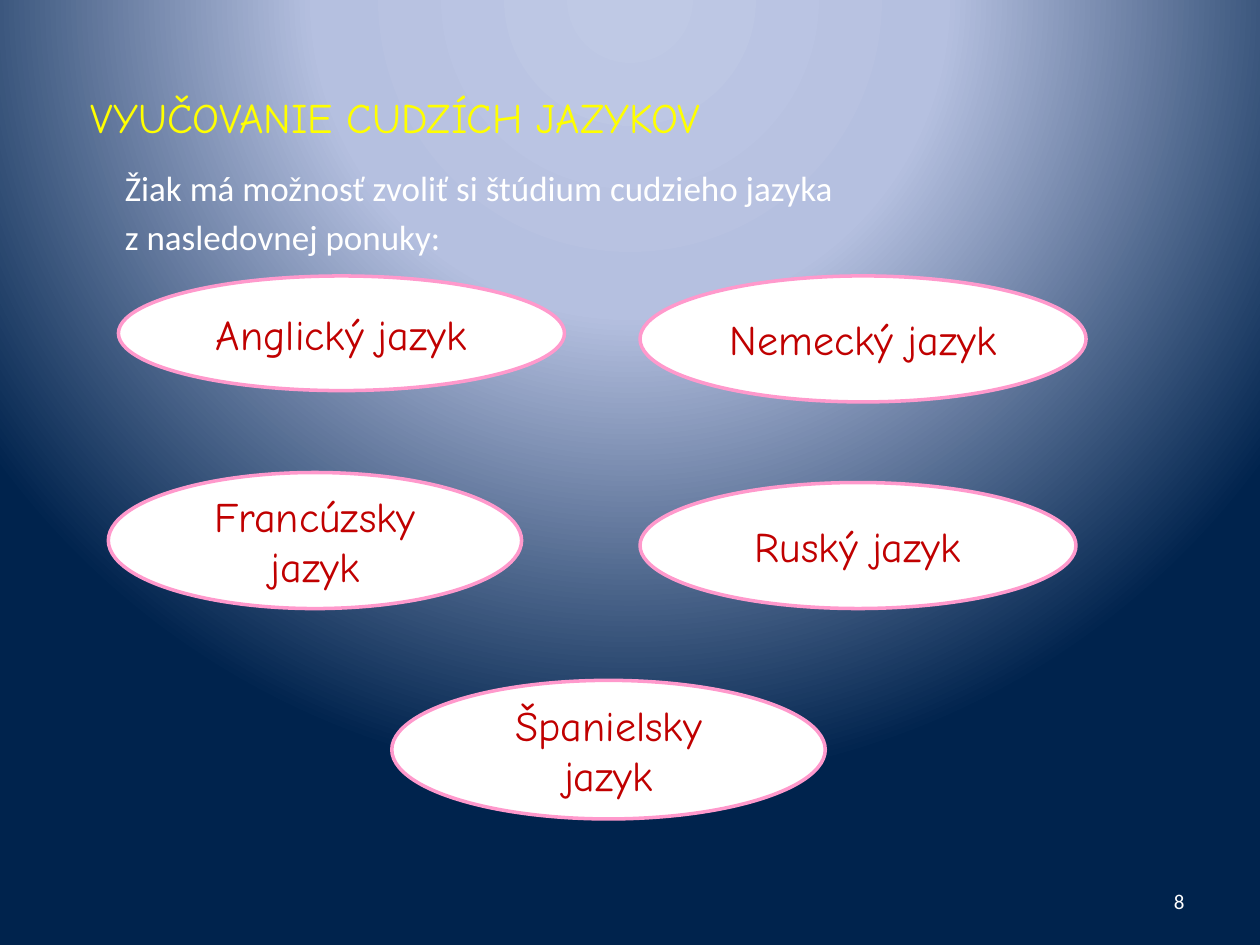
"""Build a slide listing the foreign languages a pupil can choose."""
from lxml import etree
from pptx import Presentation
from pptx import util as u
from pptx.dml.color import RGBColor
from pptx.enum import shapes, text
from pptx.oxml.ns import qn

COLORS = {
    "glow": "BFC9E5",
    "haze": "B5C0E0",
    "navy": "00234D",
    "white": "FFFFFF",
    "yellow": "FFFF00",
    "pink": "FF99CC",
    "red": "C00000",
}


class SlideBuilder:
    def __init__(self, presentation):
        self.slide = presentation.slides.add_slide(presentation.slide_layouts[1])
        self.heading_font = "Comic Neue"
        self.body_font = "Calibri"

    def color(self, name):
        return RGBColor.from_string(COLORS[name])

    def place(self, shape, left, top, width, height):
        shape.left, shape.top = u.Inches(left), u.Inches(top)
        shape.width, shape.height = u.Inches(width), u.Inches(height)

    def set_text(self, shape, lines, font, size, color, align, anchor):
        frame = shape.text_frame
        frame.text = "\n".join(lines)
        frame.word_wrap = True
        frame.auto_size = text.MSO_AUTO_SIZE.NONE
        frame.vertical_anchor = anchor
        for paragraph in frame.paragraphs:
            paragraph.alignment = align
            paragraph.font.name = font
            paragraph.font.size = u.Pt(size)
            paragraph.font.color.rgb = self.color(color)
        return frame

    def background(self, stops):
        self.slide.background.fill.gradient()
        gradient = self.slide.element.find(".//" + qn("a:gradFill"))
        for child in list(gradient):
            gradient.remove(child)
        stop_list = etree.SubElement(gradient, qn("a:gsLst"))
        for position, name in stops:
            stop = etree.SubElement(stop_list, qn("a:gs"), pos=str(position * 1000))
            etree.SubElement(stop, qn("a:srgbClr"), val=COLORS[name])
        circle = etree.SubElement(gradient, qn("a:path"), path="circle")
        etree.SubElement(circle, qn("a:fillToRect"),
                         l="50000", t="-80000", r="50000", b="180000")

    def title(self, wording, *box):
        shape = self.slide.shapes.title
        self.place(shape, *box)
        self.set_text(shape, [wording], self.heading_font, 24, "yellow",
                      text.PP_ALIGN.LEFT, text.MSO_ANCHOR.TOP)

    def body(self, lines, *box):
        shape = self.slide.placeholders[1]
        self.place(shape, *box)
        frame = self.set_text(shape, lines, self.body_font, 20, "white",
                              text.PP_ALIGN.LEFT, text.MSO_ANCHOR.TOP)
        for index, paragraph in enumerate(frame.paragraphs):
            paragraph.space_before = u.Pt(4 if index else 0)
            properties = paragraph._p.get_or_add_pPr()
            properties.set("marL", str(u.Inches(0.19)))
            properties.set("indent", "0")
            bullet = etree.Element(qn("a:buNone"))
            properties.find(qn("a:defRPr")).addprevious(bullet)

    def page_number(self, number, *box):
        shape = self.slide.shapes.add_textbox(*map(u.Inches, box))
        self.set_text(shape, [str(number)], self.body_font, 12, "white",
                      text.PP_ALIGN.RIGHT, text.MSO_ANCHOR.MIDDLE)

    def language(self, wording, *box):
        shape = self.slide.shapes.add_shape(shapes.MSO_SHAPE.OVAL, *map(u.Inches, box))
        shape.shadow.inherit = False
        shape.fill.solid()
        shape.fill.fore_color.rgb = self.color("white")
        shape.line.color.rgb = self.color("pink")
        shape.line.width = u.Pt(2)
        self.set_text(shape, [wording], self.heading_font, 24, "red",
                      text.PP_ALIGN.CENTER, text.MSO_ANCHOR.MIDDLE)


def main():
    presentation = Presentation()
    presentation.slide_width = u.Inches(10)
    presentation.slide_height = u.Inches(7.5)
    builder = SlideBuilder(presentation)
    builder.background([(0, "glow"), (40, "haze"), (100, "navy")])
    builder.page_number(8, 7.17, 6.95, 2.33, 0.4)
    builder.title("VYUČOVANIE CUDZÍCH JAZYKOV", 0.62, 0.68, 8.75, 1.33)
    builder.body(["Žiak má možnosť zvoliť si štúdium cudzieho jazyka",
                  "z nasledovnej ponuky:"], 0.7, 1.27, 8.75, 5.92)
    languages = [
        ("Anglický", 0.94, 2.19, 3.54, 0.91),
        ("Nemecký", 5.08, 2.19, 3.54, 1),
        ("Francúzsky", 0.86, 3.75, 3.28, 1.08),
        ("Ruský", 5.08, 3.83, 3.46, 1),
        ("Španielsky", 3.11, 5.4, 3.44, 1.1),
    ]
    for name, *box in languages:
        builder.language(f"{name} jazyk", *box)
    presentation.save("out.pptx")


if __name__ == "__main__":
    main()
